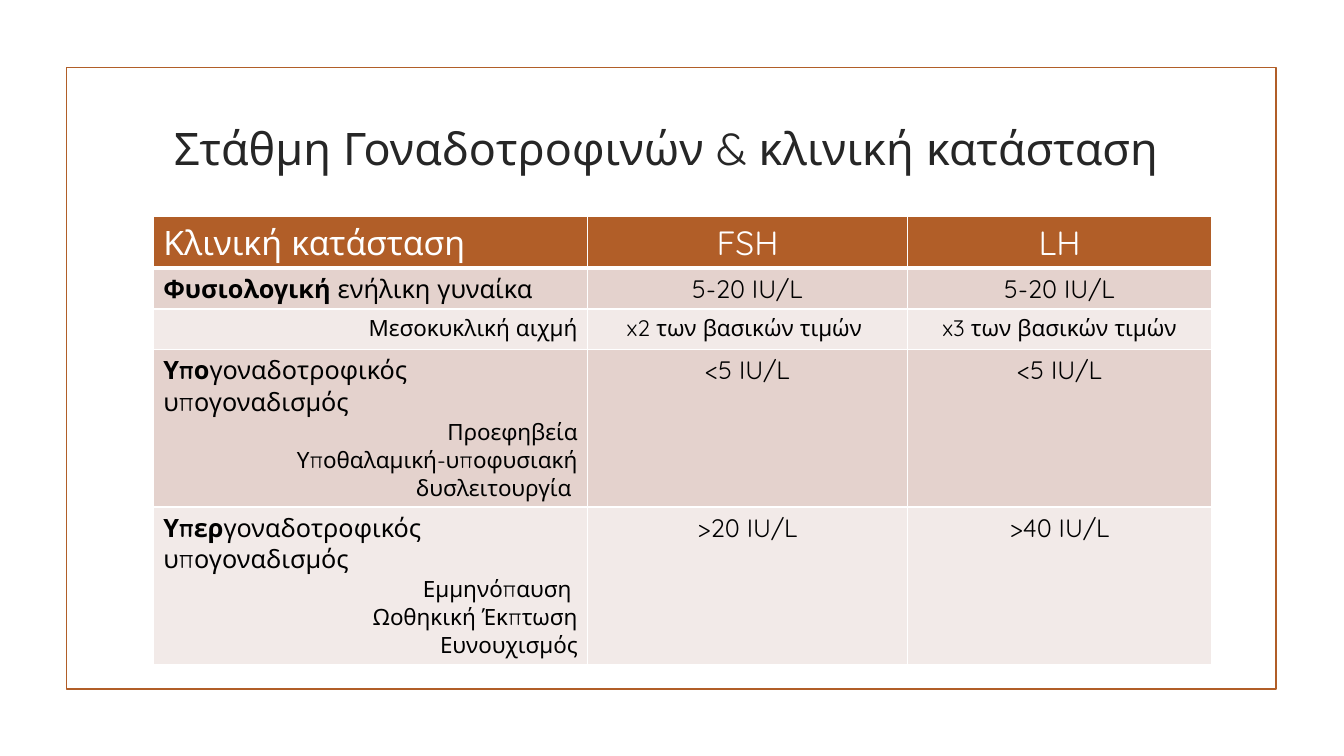
from lxml.etree import SubElement
from pptx import Presentation
from pptx.dml.color import RGBColor
from pptx.enum.shapes import MSO_SHAPE as Preset
from pptx.enum.text import MSO_ANCHOR as Anchor, PP_ALIGN as Align
from pptx.oxml.ns import qn
from pptx.util import Inches, Pt

WIDTH, HEIGHT = Inches(13.33), Inches(7.5)
RUST, ROSE, BLUSH = "B15E28", "E4D2CD", "F2EAE8"
WHITE, BLACK, CHARCOAL = "FFFFFF", "000000", "262626"


def color(code):
    """Turn a hex string into a colour."""
    return RGBColor.from_string(code)


def across(percent):
    """Turn a percentage of the slide width into a length."""
    return round(WIDTH * percent / 100)


def down(percent):
    """Turn a percentage of the slide height into a length."""
    return round(HEIGHT * percent / 100)


def area(left, top, width, height):
    """Turn four percentages into a position and a size."""
    return across(left), down(top), across(width), down(height)


class Board:
    """Hold the style and the current slide."""

    font = "Quicksand"

    def __init__(self, slide):
        """Keep the slide to draw on."""
        self.slide = slide

    def frame(self, place):
        """Draw the outline around the content."""
        border = self.slide.shapes.add_shape(Preset.RECTANGLE, *area(*place))
        border.shadow.inherit = False
        border.fill.background()
        border.line.color.rgb = color(RUST)
        border.line.width = Pt(1.25)

    def typeset(self, paragraph, runs, size, ink, align):
        """Fill a paragraph with (text, bold) runs."""
        paragraph.alignment = align
        for words, bold in runs:
            run = paragraph.add_run()
            run.text = words
            run.font.name = self.font
            run.font.size = Pt(size)
            run.font.bold = bold
            run.font.color.rgb = color(ink)

    def title(self, place, words):
        """Add the centred heading."""
        heading = self.slide.shapes.add_textbox(*area(*place)).text_frame
        heading.word_wrap = True
        heading.vertical_anchor = Anchor.MIDDLE
        self.typeset(heading.paragraphs[0], [(words, False)], 32, CHARCOAL, Align.CENTER)

    def edges(self, cell, top, bottom):
        """Give a cell white borders."""
        properties = cell._tc.get_or_add_tcPr()
        for side, points in (("L", 1), ("R", 1), ("T", top), ("B", bottom)):
            edge = SubElement(properties, qn(f"a:ln{side}"), w=str(Pt(points)))
            fill = SubElement(edge, qn("a:solidFill"))
            SubElement(fill, qn("a:srgbClr"), val=WHITE)

    def table(self, left, top, widths, heights, rows):
        """Add a table with a header and banded rows."""
        place = area(left, top, sum(widths), sum(heights))
        grid = self.slide.shapes.add_table(len(rows), len(widths), *place).table
        for column, width in zip(grid.columns, widths):
            column.width = across(width)
        for row, height in zip(grid.rows, heights):
            row.height = down(height)
        for number, cells in enumerate(rows):
            band = RUST if number == 0 else ROSE if number % 2 else BLUSH
            ink = BLACK if number else WHITE
            for column, lines in enumerate(cells):
                cell = grid.cell(number, column)
                self.edges(cell, 3 if number == 1 else 1, 1 if number else 3)
                cell.fill.solid()
                cell.fill.fore_color.rgb = color(band)
                body = cell.text_frame
                for position, (runs, size, align) in enumerate(lines):
                    paragraph = body.add_paragraph() if position else body.paragraphs[0]
                    self.typeset(paragraph, runs, size, ink, align)


def condition(stem, rest, *causes):
    """Build a clinical condition with its causes below."""
    heading = ([(stem, True), (rest, False)], 18, Align.LEFT)
    return [heading] + [([(cause, False)], 16, Align.RIGHT) for cause in causes]


def single(words, size=18, align=Align.CENTER):
    """Build a cell with one plain line."""
    return [([(words, False)], size, align)]


def main():
    """Build the slide and save it."""
    deck = Presentation()
    deck.slide_width, deck.slide_height = WIDTH, HEIGHT
    board = Board(deck.slides.add_slide(deck.slide_layouts[6]))
    board.frame((4.95, 8.93, 90.02, 82.27))
    board.title((10.65, 14.27, 78.77, 10.4), "Στάθμη Γοναδοτροφινών & κλινική κατάσταση ")
    hypogonadism = "γοναδοτροφικός υπογοναδισμός"
    levels = [
        [single("Κλινική κατάσταση", 24, Align.LEFT), single("FSH", 24), single("LH", 24)],
        [condition("Φυσιολογική", " ενήλικη γυναίκα"), single("5-20 IU/L"), single("5-20 IU/L")],
        [single("Μεσοκυκλική αιχμή", 16, Align.RIGHT),
         single("x2 των βασικών τιμών ", 16), single("x3 των βασικών τιμών", 16)],
        [condition("Υπο", hypogonadism, "Προεφηβεία", "Υποθαλαμική-υποφυσιακή δυσλειτουργία "),
         single("<5 IU/L"), single("<5 IU/L")],
        [condition("Υπερ", hypogonadism, "Εμμηνόπαυση ", "Ωοθηκική Έκπτωση", "Ευνουχισμός"),
         single(">20 IU/L"), single(">40 IU/L")],
    ]
    board.table(11.4, 28.67, (32.33, 23.78, 22.66), (6.8, 5.4, 5.4, 20.8, 20.8), levels)
    deck.save("out.pptx")


if __name__ == "__main__":
    main()
